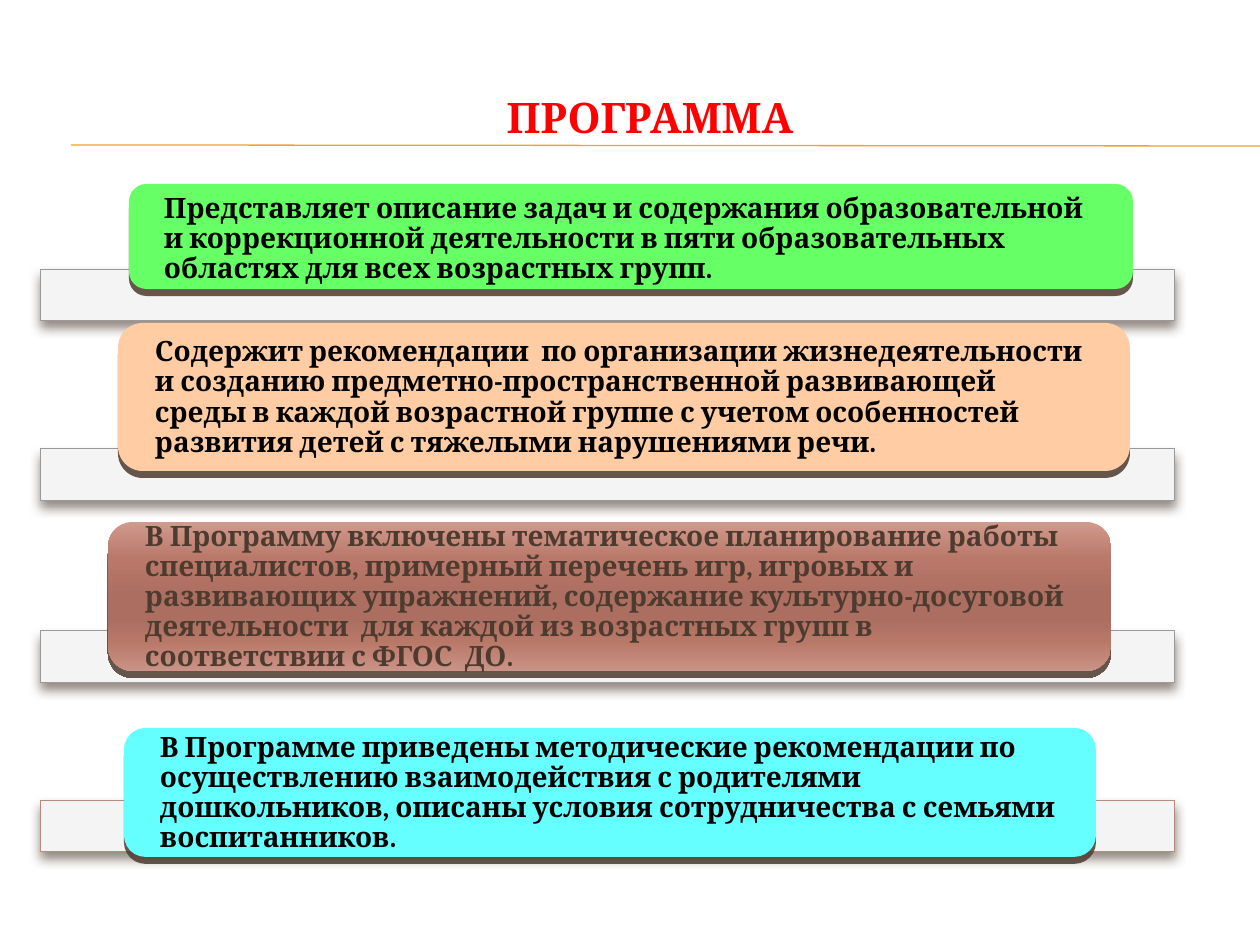
from lxml.etree import SubElement
from pptx import Presentation
from pptx.dml.color import RGBColor as Rgb
from pptx.enum.shapes import MSO_CONNECTOR as Conn, MSO_SHAPE as Kind
from pptx.enum.text import MSO_ANCHOR as Anchor, MSO_AUTO_SIZE as Auto, PP_ALIGN as Align
from pptx.oxml.ns import qn
from pptx.util import Emu, Pt

PX = 914400 // 126
FONT = "Cambria"
HEX = {
    "title": "FF0000", "rule": "F0A22E", "strip": "F4F4F4", "edge": "999999",
    "rose": "B58B80", "shade": "4E3B30", "ink": "000000", "brown": "4E3B30",
    "green": "66FF66", "peach": "FFCCA3", "aqua": "66FFFF",
}
BLEND = [(0, "D09A8D"), (25, "B97869"), (50, "AB6E60"),
         (65, "AB6E60"), (80, "B87868"), (100, "CA9386")]

# Each row: strip top, strip edge, card box, text drop, card fill, text colour, text
ROWS = [
    (269, "edge", (129, 184, 1004, 105), 3, "green", "ink",
     "Представляет описание задач и содержания образовательной и коррекционной "
     "деятельности в пяти образовательных областях для всех возрастных групп."),
    (449, "edge", (118, 323, 1012, 148), 1, "peach", "ink",
     "Содержит рекомендации  по организации жизнедеятельности и созданию "
     "предметно-пространственной развивающей среды в каждой возрастной группе "
     "с учетом особенностей развития детей с тяжелыми нарушениями речи."),
    (631, "edge", (108, 522, 1003, 149), 1, None, "brown",
     "В Программу включены тематическое планирование работы специалистов, "
     "примерный перечень игр, игровых и развивающих упражнений, содержание "
     "культурно-досуговой деятельности  для каждой из возрастных групп "
     "в соответствии с ФГОС  ДО."),
    (800, "rose", (124, 728, 972, 129), 1, "aqua", "ink",
     "В Программе приведены методические рекомендации по осуществлению "
     "взаимодействия с родителями дошкольников, описаны условия сотрудничества "
     "с семьями воспитанников."),
]


def px(*nums):
    return [Emu(n * PX) for n in nums]


def color(name):
    return Rgb.from_string(HEX[name])


def write(para, text, size, tint):
    run = para.add_run()
    run.text = text
    font = run.font
    font.name, font.size, font.bold = FONT, Pt(size), True
    font.color.rgb = color(tint)


def shadow(shape, blur, alpha):
    shape.shadow.inherit = False
    effects = shape._element.spPr.find(qn("a:effectLst"))
    outer = SubElement(effects, qn("a:outerShdw"), blurRad=str(Pt(blur)),
                       dist=str(Pt(4)), dir="5400000", rotWithShape="0")
    tone = SubElement(outer, qn("a:srgbClr"), val=HEX["shade"])
    SubElement(tone, qn("a:alpha"), val=str(alpha * 1000))


def blend(shape):
    shape.fill.gradient()
    grad = shape._element.spPr.find(qn("a:gradFill"))
    for child in list(grad):
        grad.remove(child)
    stops = SubElement(grad, qn("a:gsLst"))
    for pos, tone in BLEND:
        stop = SubElement(stops, qn("a:gs"), pos=str(pos * 1000))
        SubElement(stop, qn("a:srgbClr"), val=tone)
    SubElement(grad, qn("a:lin"), ang="5400000", scaled="0")


def add_title(slide, box):
    title = slide.shapes.title
    title.left, title.top, title.width, title.height = px(*box)
    frame = title.text_frame
    frame.auto_size = Auto.NONE
    frame.vertical_anchor = Anchor.MIDDLE
    para = frame.paragraphs[0]
    para.alignment = Align.CENTER
    write(para, "ПРОГРАММА", 24, "title")


def add_rule(slide, *ends):
    line = slide.shapes.add_connector(Conn.STRAIGHT, *px(*ends))
    line.line.color.rgb = color("rule")
    line.line.width = Pt(0.75)
    SubElement(line._element.spPr, qn("a:effectLst"))


def add_strip(slide, box, edge):
    strip = slide.shapes.add_shape(Kind.RECTANGLE, *px(*box))
    strip.fill.solid()
    strip.fill.fore_color.rgb = color("strip")
    strip.line.color.rgb = color(edge)
    strip.line.width = Pt(0.5)
    shadow(strip, 6, 60)


def add_card(slide, box, fill):
    card = slide.shapes.add_shape(Kind.ROUNDED_RECTANGLE, *px(*box))
    if fill:
        card.fill.solid()
        card.fill.fore_color.rgb = color(fill)
    else:
        blend(card)
    card.line.fill.background()
    shadow(card, 0, 85)


def add_label(slide, box, drop, tint, text):
    left, top, width, height = box
    pad = height // 20
    label = slide.shapes.add_textbox(
        *px(left + pad, top + pad + drop, width - 2 * pad, height - 2 * pad))
    frame = label.text_frame
    frame.word_wrap = True
    frame.vertical_anchor = Anchor.MIDDLE
    frame.margin_left, frame.margin_right = px(30, 30)
    frame.margin_top = frame.margin_bottom = 0
    para = frame.paragraphs[0]
    para.alignment = Align.LEFT
    para.line_spacing = 0.9
    write(para, text, 16, tint)


def main():
    deck = Presentation()
    deck.slide_width, deck.slide_height = px(1260, 945)
    slide = deck.slides.add_slide(deck.slide_layouts[5])

    # Heading over its rule
    add_rule(slide, 71, 145, 1260, 146)
    add_title(slide, (124, 85, 1052, 64))

    # Statement cards, each over a pale strip
    for top, edge, box, drop, fill, tint, text in ROWS:
        add_strip(slide, (41, top, 1134, 52), edge)
        add_card(slide, box, fill)
        add_label(slide, box, drop, tint, text)

    deck.save("out.pptx")


if __name__ == "__main__":
    main()
